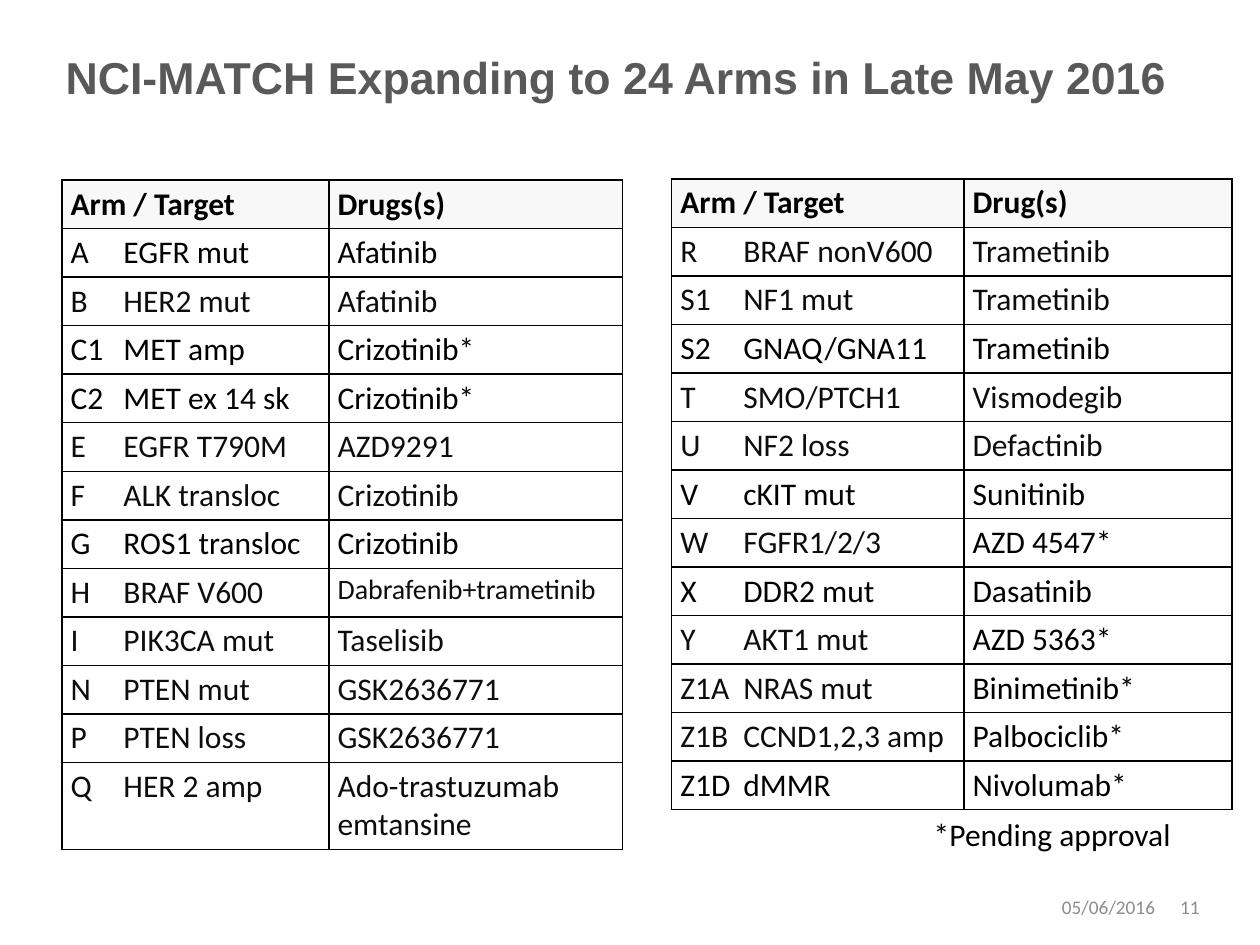
from lxml import etree
from pptx import Presentation
from pptx.dml.color import RGBColor
from pptx.enum import text
from pptx.oxml import parse_xml
from pptx.oxml.ns import nsdecls
from pptx.util import Inches, Pt

BLACK, SOFT_BLACK, GREY, HEADER_FILL = "000000", "0D0D0D", "8C8C8C", "F8F8F8"
SOFT_ARMS = "B E F H I N P Q R S1 T U W Y Z1A Z1B".split()


def write(tf, content, size=18, color=BLACK, font="Calibri", bold=False,
          align=text.PP_ALIGN.LEFT, anchor=text.MSO_ANCHOR.TOP, tab=None, after=0):
    """Fill a text frame with one formatted paragraph."""
    tf.word_wrap = True
    tf.vertical_anchor = anchor
    p = tf.paragraphs[0]
    if tab:
        p._p.get_or_add_pPr().append(parse_xml(
            f'<a:tabLst {nsdecls("a")}><a:tab pos="{Inches(tab)}" algn="l"/></a:tabLst>'))
    p.alignment = align
    p.space_before, p.space_after = Pt(0), Pt(after)
    r = p.add_run()
    r.text = content
    r.font.size, r.font.name, r.font.bold = Pt(size), font, bold
    r.font.color.rgb = RGBColor.from_string(color)


def add_borders(cell):
    tc_pr = cell._tc.get_or_add_tcPr()
    for side in ("lnL", "lnR", "lnT", "lnB"):
        tc_pr.append(etree.fromstring(
            f'<a:{side} {nsdecls("a")} w="{Pt(1)}"><a:solidFill>'
            f'<a:srgbClr val="{BLACK}"/></a:solidFill></a:{side}>'))


prs = Presentation()
prs.slide_width, prs.slide_height = Inches(10), Inches(7.5)
s = prs.slides.add_slide(prs.slide_layouts[5])

title = s.shapes.title
title.left, title.top = Inches(0.42), Inches(0.3)
title.width, title.height = Inches(9.08), Inches(0.62)
title.text_frame.auto_size = text.MSO_AUTO_SIZE.NONE
write(title.text_frame, "NCI-MATCH Expanding to 24 Arms in Late May 2016", size=25.5,
      color="595959", font="Arial", bold=True, anchor=text.MSO_ANCHOR.MIDDLE)

left_arms = [
    ("A", "EGFR mut", "Afatinib"),
    ("B", "HER2 mut", "Afatinib"),
    ("C1", "MET amp", "Crizotinib*"),
    ("C2", "MET ex 14 sk", "Crizotinib*"),
    ("E", "EGFR T790M", "AZD9291"),
    ("F", "ALK transloc", "Crizotinib"),
    ("G", "ROS1 transloc", "Crizotinib"),
    ("H", "BRAF V600", "Dabrafenib+trametinib"),
    ("I", "PIK3CA mut", "Taselisib"),
    ("N", "PTEN mut", "GSK2636771"),
    ("P", "PTEN loss", "GSK2636771"),
    ("Q", "HER 2 amp", "Ado-trastuzumab emtansine"),
]
right_arms = [
    ("R", "BRAF nonV600", "Trametinib"),
    ("S1", "NF1 mut", "Trametinib"),
    ("S2", "GNAQ/GNA11", "Trametinib"),
    ("T", "SMO/PTCH1", "Vismodegib"),
    ("U", "NF2 loss", "Defactinib"),
    ("V", "cKIT mut", "Sunitinib"),
    ("W", "FGFR1/2/3", "AZD 4547*"),
    ("X", "DDR2 mut", "Dasatinib"),
    ("Y", "AKT1 mut", "AZD 5363*"),
    ("Z1A", "NRAS mut", "Binimetinib*"),
    ("Z1B", "CCND1,2,3 amp", "Palbociclib*"),
    ("Z1D", "dMMR", "Nivolumab*"),
]
# left, top, column widths, last row height, tab stop, drug heading, arms
tables = [
    (0.49, 1.43, (2.12, 2.33), 0.69, 0.42, "Drugs(s)", left_arms),
    (5.33, 1.42, (2.32, 2.13), 0.38, 0.5, "Drug(s)", right_arms),
]
for left, top, widths, last_height, tab, heading, arms in tables:
    heights = [0.38] * len(arms) + [last_height]
    table = s.shapes.add_table(len(heights), 2, Inches(left), Inches(top),
                               Inches(sum(widths)), Inches(sum(heights))).table
    table.first_row = table.horz_banding = False
    for column, width in zip(table.columns, widths):
        column.width = Inches(width)
    for row, height in zip(table.rows, heights):
        row.height = Inches(height)
    for cell in table.iter_cells():
        cell.margin_left = cell.margin_right = Inches(0.07)
        cell.margin_top = cell.margin_bottom = Inches(0.04)
        add_borders(cell)
        cell.fill.background()
    for col, label in enumerate(("Arm / Target", heading)):
        cell = table.cell(0, col)
        cell.fill.solid()
        cell.fill.fore_color.rgb = RGBColor.from_string(HEADER_FILL)
        write(cell.text_frame, label, bold=True)
    for row, (arm, target, drug) in enumerate(arms, 1):
        color = SOFT_BLACK if arm in SOFT_ARMS else BLACK
        write(table.cell(row, 0).text_frame, f"{arm}\t{target}", color=color, tab=tab)
        write(table.cell(row, 1).text_frame, drug, size=16 if "+" in drug else 18,
              color=BLACK if drug.endswith("*") else color)

right, middle = text.PP_ALIGN.RIGHT, text.MSO_ANCHOR.MIDDLE
footer = dict(size=11, color=GREY, anchor=middle)
for content, left, top, width, fmt in [
    ("*Pending approval", 3.17, 6.42, 6.22, dict(align=right, after=9)),
    ("05/06/2016", 8.33, 7, 0.98, footer),
    ("11", 9.22, 7, 0.4, dict(footer, align=right)),
]:
    sp = s.shapes.add_textbox(Inches(left), Inches(top), Inches(width), Inches(0.4))
    write(sp.text_frame, content, **fmt)

prs.save("out.pptx")
